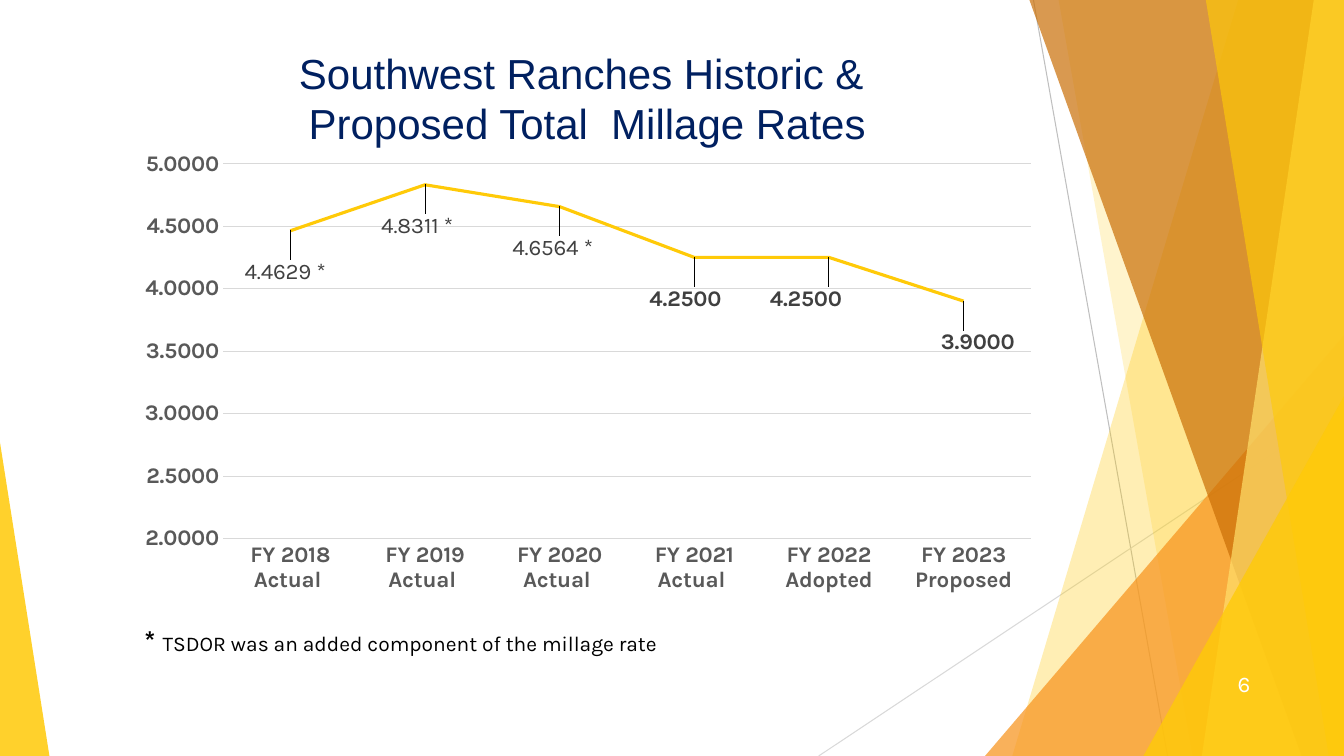
from lxml import etree
from pptx import Presentation
from pptx.chart.data import CategoryChartData
from pptx.dml.color import RGBColor
from pptx.enum.chart import XL_CHART_TYPE, XL_LABEL_POSITION, XL_TICK_MARK
from pptx.enum.shapes import MSO_CONNECTOR, MSO_SHAPE
from pptx.enum.text import MSO_ANCHOR, PP_ALIGN
from pptx.oxml import parse_xml
from pptx.oxml.ns import nsdecls, qn
from pptx.util import Inches, Pt

SLIDE_W, SLIDE_H = 13.33, 7.5
GOLD = RGBColor(0xFF, 0xCA, 0x08)
PALE_GOLD = RGBColor(0xFF, 0xDF, 0x6B)
ORANGE = RGBColor(0xF8, 0x93, 0x1D)
BROWN = RGBColor(0xCA, 0x6F, 0x06)
NAVY = RGBColor(0x00, 0x20, 0x60)
BLACK = RGBColor(0x00, 0x00, 0x00)
WHITE = RGBColor(0xFF, 0xFF, 0xFF)
AXIS_GRAY = RGBColor(0x59, 0x59, 0x59)
LABEL_GRAY = RGBColor(0x40, 0x40, 0x40)
GRID_GRAY = RGBColor(0xD9, 0xD9, 0xD9)
RAY_GRAY = RGBColor(0xBF, 0xBF, 0xBF)
BODY_FONT = "Karla"
RATE_FORMAT = "0.0000"

# Year, rate, label text (None shows the value), sideways label shift
RATES = [
    ("FY 2018 Actual ", 4.4629, "4.4629 *", -0.006),
    ("FY 2019 Actual ", 4.8311, "4.8311 *", -0.009),
    ("FY 2020 Actual ", 4.6564, "4.6564 *", -0.008),
    ("FY 2021 Actual ", 4.25, None, -0.01),
    ("FY 2022 Adopted", 4.25, None, -0.026),
    ("FY 2023 Proposed", 3.9, None, 0.016),
]
LABEL_DROP = 0.057


def style_font(font, size, color, bold=False, name=BODY_FONT):
    font.name, font.size, font.bold = name, Pt(size), bold
    font.color.rgb = color


def paint(shape, color, opacity):
    """Fill a shape with a see-through colour; opacity is in percent."""
    shape.shadow.inherit = False
    shape.line.fill.background()
    shape.fill.solid()
    shape.fill.fore_color.rgb = color
    srgb = shape.fill._xPr.find(qn("a:solidFill")).find(qn("a:srgbClr"))
    etree.SubElement(srgb, qn("a:alpha"), val=str(opacity * 1000))


def add_ray(slide, x1, y1, x2, y2, color):
    ray = slide.shapes.add_connector(
        MSO_CONNECTOR.STRAIGHT, Inches(x1), Inches(y1), Inches(x2), Inches(y2))
    ray.line.color.rgb = color
    ray.line.width = Pt(0.75)
    etree.SubElement(ray._element.spPr, qn("a:effectLst"))


def add_band(slide, top_x, bottom_x, color, opacity):
    """Fill from a slanted left edge to the right edge of the slide."""
    builder = slide.shapes.build_freeform(Inches(top_x), 0)
    corners = [(SLIDE_W, 0), (SLIDE_W, SLIDE_H), (bottom_x, SLIDE_H)]
    builder.add_line_segments([(Inches(x), Inches(y)) for x, y in corners], close=True)
    paint(builder.convert_to_shape(), color, opacity)


def add_corner(slide, left, top, width, apex, color, opacity):
    """Add a triangle standing on the slide bottom; apex runs from 0 (left) to 1 (right)."""
    corner = slide.shapes.add_shape(
        MSO_SHAPE.ISOSCELES_TRIANGLE, Inches(left), Inches(top),
        Inches(width), Inches(SLIDE_H - top))
    corner.adjustments[0] = apex
    paint(corner, color, opacity)


def add_backdrop(slide):
    add_ray(slide, 10.25, 0, 11.58, SLIDE_H, RAY_GRAY)
    add_ray(slide, SLIDE_W, 4.03, 8.12, SLIDE_H, GRID_GRAY)
    add_band(slide, 12.28, 10.04, GOLD, 30)
    add_band(slide, 10.5, 11.83, GOLD, 20)
    add_corner(slide, 9.77, 3.33, 3.56, 1, ORANGE, 72)
    add_band(slide, 10.21, 12.91, BROWN, 70)
    add_band(slide, 13.03, 11.92, PALE_GOLD, 70)
    add_band(slide, 11.96, 13.18, GOLD, 65)
    add_corner(slide, 11.34, 3.93, 1.99, 1, GOLD, 80)
    add_corner(slide, 0, 4.39, 0.49, 0, GOLD, 85)


def add_text(slide, left, top, width, height, lines, size, color,
             name=BODY_FONT, align=PP_ALIGN.LEFT, anchor=MSO_ANCHOR.TOP):
    box = slide.shapes.add_textbox(Inches(left), Inches(top), Inches(width), Inches(height))
    frame = box.text_frame
    frame.word_wrap = True
    frame.vertical_anchor = anchor
    frame.text = "\n".join(lines)
    for paragraph in frame.paragraphs:
        paragraph.alignment = align
        style_font(paragraph.font, size, color, name=name)
    return frame


def add_footnote(slide):
    frame = add_text(slide, 1.33, 6.14, 6.25, 0.69, ["* "], 15, BLACK)
    paragraph = frame.paragraphs[0]
    star = paragraph.runs[0].font
    star.size, star.bold = Pt(20), True
    paragraph.add_run().text = "TSDOR was an added component of the millage rate"


def manual_layout(x, y, extra=""):
    return parse_xml(
        f'<c:layout {nsdecls("c")}><c:manualLayout>{extra}'
        f'<c:x val="{x}"/><c:y val="{y}"/></c:manualLayout></c:layout>')


def place_plot(chart, x, y, width, height):
    """Fix the inner plot area, as fractions of the chart."""
    modes = ('<c:layoutTarget val="inner"/><c:xMode val="edge"/><c:yMode val="edge"/>')
    layout = manual_layout(x, y, modes)
    for tag, value in (("c:w", width), ("c:h", height)):
        etree.SubElement(layout[0], qn(tag), val=str(value))
    plot_area = chart.element.find(qn("c:chart")).find(qn("c:plotArea"))
    for old in plot_area.findall(qn("c:layout")):
        plot_area.remove(old)
    plot_area.insert(0, layout)


def style_axes(chart):
    years, rates = chart.category_axis, chart.value_axis
    for axis in (years, rates):
        axis.major_tick_mark = axis.minor_tick_mark = XL_TICK_MARK.NONE
        style_font(axis.tick_labels.font, 16, AXIS_GRAY, bold=True)
    rates.minimum_scale, rates.maximum_scale, rates.major_unit = 2, 5, 0.5
    rates.tick_labels.number_format = RATE_FORMAT
    rates.tick_labels.number_format_is_linked = False
    rates.format.line.fill.background()
    rates.has_major_gridlines = True
    for line in (years.format.line, rates.major_gridlines.format.line):
        line.color.rgb = GRID_GRAY
        line.width = Pt(0.75)


def label_points(chart, series):
    labels = series.data_labels
    labels.show_value = True
    labels.number_format = RATE_FORMAT
    labels.number_format_is_linked = False
    labels.position = XL_LABEL_POSITION.BELOW
    style_font(labels.font, 16, LABEL_GRAY, bold=True)
    for index, (_, _, text, _) in enumerate(RATES):
        label = series.points[index].data_label
        if text:
            label.text_frame.text = text
            style_font(label.text_frame.paragraphs[0].runs[0].font, 16, LABEL_GRAY)
        else:
            style_font(label.font, 16, LABEL_GRAY, bold=True)
        label.position = XL_LABEL_POSITION.BELOW
    for point_label, (_, _, _, shift) in zip(chart.element.iter(qn("c:dLbl")), RATES):
        point_label.find(qn("c:idx")).addnext(manual_layout(shift, LABEL_DROP))


def add_millage_chart(slide):
    data = CategoryChartData(number_format=RATE_FORMAT)
    data.categories = [year for year, *_ in RATES]
    data.add_series("Series 1", [rate for _, rate, *_ in RATES])
    chart = slide.shapes.add_chart(
        XL_CHART_TYPE.LINE, Inches(1.42), Inches(1.5), Inches(8.81), Inches(4.38), data).chart
    chart.has_legend = chart.has_title = False
    style_font(chart.font, 10, BLACK)
    chart.plots[0].vary_by_categories = False
    series = chart.plots[0].series[0]
    series.smooth = False
    series.format.line.color.rgb = GOLD
    series.format.line.width = Pt(2.25)
    style_axes(chart)
    label_points(chart, series)
    place_plot(chart, 0.09, 0.027, 0.91, 0.854)


def main():
    deck = Presentation()
    deck.slide_width, deck.slide_height = Inches(SLIDE_W), Inches(SLIDE_H)
    slide = deck.slides.add_slide(deck.slide_layouts[6])
    add_backdrop(slide)
    add_text(slide, 1.42, 0.42, 8.81, 1.11,
             ["Southwest Ranches Historic & ", "Proposed Total  Millage Rates"],
             30, NAVY, name="Arial", align=PP_ALIGN.CENTER)
    add_millage_chart(slide)
    add_text(slide, 11.75, 6.58, 0.75, 0.4, ["6"], 16, WHITE,
             align=PP_ALIGN.RIGHT, anchor=MSO_ANCHOR.MIDDLE)
    add_footnote(slide)
    deck.save("out.pptx")


if __name__ == "__main__":
    main()
